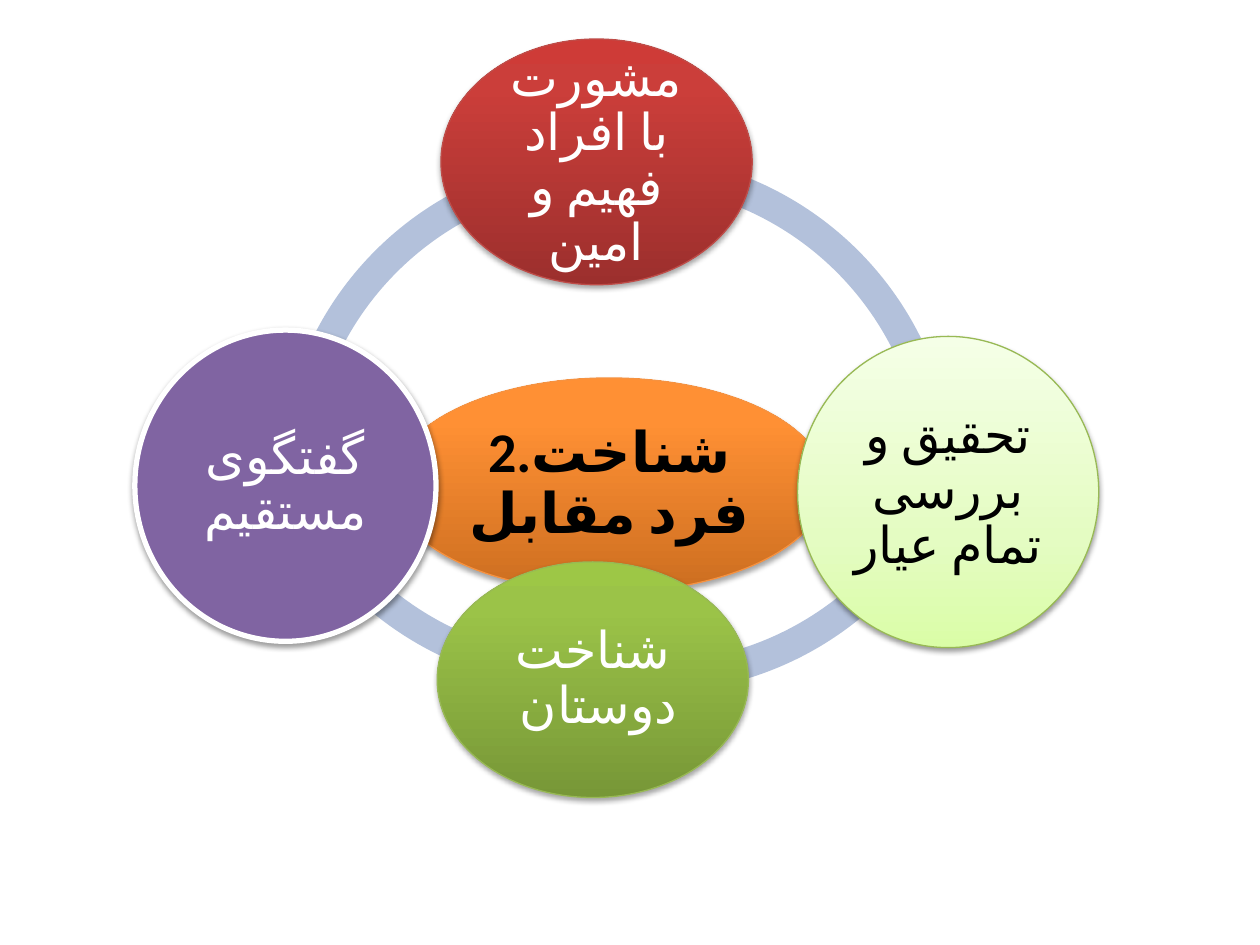
from lxml import etree
from pptx import Presentation
from pptx import util as u
from pptx.dml.color import RGBColor
from pptx.enum import lang, shapes, text
from pptx.oxml import ns

FONT = "Calibri"
WHITE = RGBColor(0xFF, 0xFF, 0xFF)
BLACK = RGBColor(0, 0, 0)
RING = RGBColor(0xB3, 0xC1, 0xDB)
PURPLE = RGBColor(0x80, 0x64, 0xA2)
ORANGE_LINE = RGBColor(0xF6, 0x92, 0x40)
RED_LINE = RGBColor(0xBF, 0x4C, 0x48)
GREEN_LINE = RGBColor(0x98, 0xB9, 0x55)
ORANGE = ((0, RGBColor(0xCC, 0x6E, 0x20)), (80, RGBColor(0xFF, 0x90, 0x34)),
          (100, RGBColor(0xFF, 0x91, 0x36)))
RED = ((0, RGBColor(0x9C, 0x2F, 0x2D)), (80, RGBColor(0xCB, 0x3E, 0x3A)),
       (100, RGBColor(0xCE, 0x3B, 0x37)))
PALE_GREEN = ((0, RGBColor(0xDA, 0xFD, 0xA7)), (35, RGBColor(0xE4, 0xFC, 0xC2)),
              (100, RGBColor(0xF5, 0xFF, 0xE7)))
GREEN = ((0, RGBColor(0x77, 0x97, 0x37)), (80, RGBColor(0x9B, 0xC3, 0x48)),
         (100, RGBColor(0x9D, 0xC7, 0x46)))

ARC_SIZE = 5.25
ARCS = (
    (2.21, 1.22, 107.97, 160.65),
    (2, 0.21, 52.94, 93.97),
    (2.54, 0.25, 14.12, 60.24),
    (2.33, 1.22, 159.05, 0.75),
)


def add_child(parent, tag, **attributes):
    child = etree.SubElement(parent, ns.qn(tag))
    for name, value in attributes.items():
        child.set(name, str(value))
    return child


def add_arc(page, left, top, start, end):
    arc = page.shapes.add_shape(
        shapes.MSO_SHAPE.BLOCK_ARC, u.Inches(left), u.Inches(top),
        u.Inches(ARC_SIZE), u.Inches(ARC_SIZE))
    for index, value in enumerate((start, end, 0.046)):
        arc.adjustments[index] = value
    arc.shadow.inherit = False
    arc.fill.solid()
    arc.fill.fore_color.rgb = RING
    arc.line.fill.background()


def fill_gradient(shape, stops):
    shape.fill.gradient()
    shape.fill.gradient_angle = 90
    stop_list = shape._element.spPr.find(".//" + ns.qn("a:gsLst"))
    for stop in list(stop_list):
        stop_list.remove(stop)
    for position, color in stops:
        stop = add_child(stop_list, "a:gs", pos=position * 1000)
        add_child(stop, "a:srgbClr", val=color)


def add_shadow(shape, opacity, distance):
    shape.shadow.inherit = False
    effects = shape._element.spPr.find(ns.qn("a:effectLst"))
    shadow = add_child(effects, "a:outerShdw", blurRad=u.Pt(3.1),
                       dist=u.Pt(distance), dir=90 * 60000, rotWithShape=0)
    color = add_child(shadow, "a:srgbClr", val=BLACK)
    add_child(color, "a:alpha", val=opacity * 1000)


def write_label(shape, label, size, color, bold, rtl):
    frame = shape.text_frame
    frame.word_wrap = True
    frame.vertical_anchor = text.MSO_ANCHOR.MIDDLE
    frame.margin_left = frame.margin_right = u.Inches(0.04)
    frame.margin_top = frame.margin_bottom = u.Inches(0.04)
    para = frame.paragraphs[0]
    para.alignment = text.PP_ALIGN.CENTER
    para.line_spacing = 0.9
    if rtl:
        para._p.get_or_add_pPr().set("rtl", "1")
    span = para.add_run()
    span.text = label
    span.font.name = FONT
    span.font.size = u.Pt(size)
    span.font.bold = bold
    span.font.language_id = lang.MSO_LANGUAGE_ID.FARSI
    span.font.color.rgb = color
    add_child(span._r.get_or_add_rPr(), "a:cs", typeface=FONT)


def add_oval(page, place, label, fill, line, color=WHITE, line_width=0.75,
             shadow=(35, 1.8), size=29, bold=False, rtl=True):
    oval = page.shapes.add_shape(
        shapes.MSO_SHAPE.OVAL, *(u.Inches(value) for value in place))
    if isinstance(fill, RGBColor):
        oval.fill.solid()
        oval.fill.fore_color.rgb = fill
    else:
        fill_gradient(oval, fill)
    oval.line.color.rgb = line
    oval.line.width = u.Pt(line_width)
    add_shadow(oval, *shadow)
    write_label(oval, label, size, color, bold, rtl)


def main():
    deck = Presentation()
    deck.slide_width = u.Inches(10)
    deck.slide_height = u.Inches(7.5)
    page = deck.slides.add_slide(deck.slide_layouts[6])
    for arc in ARCS:
        add_arc(page, *arc)
    add_oval(page, (3.11, 3, 3.45, 1.7), "2.شناخت فرد مقابل", ORANGE,
             ORANGE_LINE, color=BLACK, size=32, bold=True, rtl=False)
    add_oval(page, (3.5, 0.31, 2.47, 1.95), "مشورت با افراد فهیم و امین",
             RED, RED_LINE)
    add_oval(page, (6.33, 2.67, 2.39, 2.47), "تحقیق و بررسی تمام عیار",
             PALE_GREEN, GREEN_LINE, color=BLACK, shadow=(38, 1.6))
    add_oval(page, (3.47, 4.46, 2.47, 1.87), "شناخت دوستان ",
             GREEN, GREEN_LINE)
    add_oval(page, (1.07, 2.62, 2.39, 2.47), "گفتگوی مستقیم",
             PURPLE, WHITE, line_width=3, shadow=(38, 1.6))
    deck.save("out.pptx")


if __name__ == "__main__":
    main()
